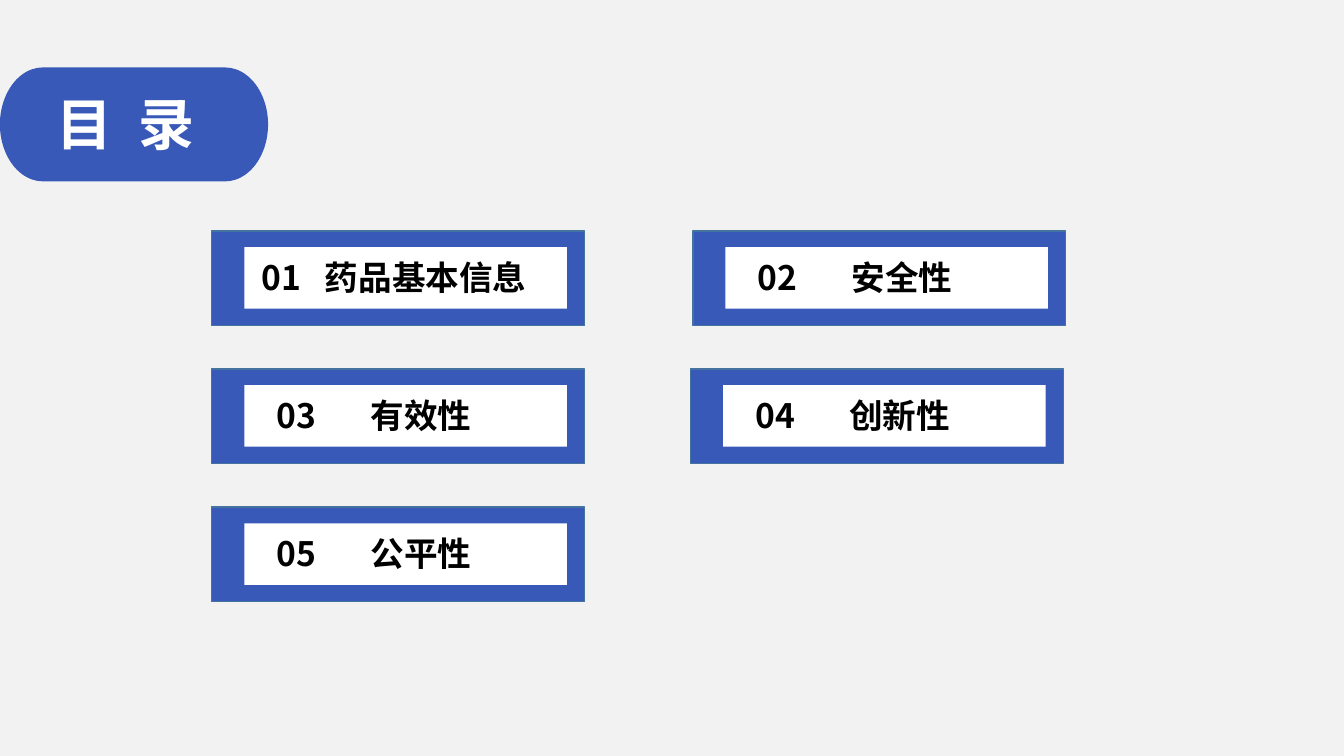
from pptx import Presentation
from pptx.dml.color import RGBColor
from pptx.enum.shapes import MSO_SHAPE as Geo
from pptx.enum.text import MSO_ANCHOR as Anchor
from pptx.oxml.ns import qn
from pptx.util import Pt

TITLE = "目\t录"
CARDS = [
    ("01\t药品基本信息", 151.2, 0, 5.4, 45),
    ("02\t安全性", 494.9, 0, 16, 67),
    ("03\t有效性", 151.2, 1, 16, 67),
    ("04\t创新性", 493.2, 1, 16, 67),
    ("05\t公平性", 151.2, 2, 16, 67),
]
FONT = "Noto Sans CJK SC"
BLUE = RGBColor(0x39, 0x59, 0xB9)
EDGE = RGBColor(0x43, 0x73, 0x9E)
WHITE = RGBColor(0xFF, 0xFF, 0xFF)
BLACK = RGBColor(0, 0, 0)
GREY = RGBColor(0xF2, 0xF2, 0xF2)
TOP, PITCH = 164.9, 98.65

deck = Presentation()
deck.slide_width, deck.slide_height = Pt(960), Pt(540)
slide = deck.slides.add_slide(deck.slide_layouts[6])
slide.background.fill.solid()
slide.background.fill.fore_color.rgb = GREY


def add_box(geo, spot, fill, edge=None):
    box = slide.shapes.add_shape(geo, *map(Pt, spot))
    box.shadow.inherit = False
    box.fill.solid()
    box.fill.fore_color.rgb = fill
    if edge is None:
        box.line.fill.background()
    else:
        box.line.color.rgb = edge
        box.line.width = Pt(1)


def add_text(text, spot, size, color, indent, tab):
    frame = slide.shapes.add_textbox(*map(Pt, spot)).text_frame
    frame.word_wrap = True
    frame.vertical_anchor = Anchor.MIDDLE
    frame.margin_left = Pt(7.2 + indent)
    para = frame.paragraphs[0]
    props = para._p.get_or_add_pPr()
    tabs = props.makeelement(qn("a:tabLst"), {})
    stop = tabs.makeelement(qn("a:tab"), {"pos": str(Pt(tab)), "algn": "l"})
    tabs.append(stop)
    props.append(tabs)
    run = para.add_run()
    run.text = text
    font = run.font
    font.name, font.size, font.bold = FONT, Pt(size), True
    font.color.rgb = color
    marks = run._r.get_or_add_rPr()
    marks.append(marks.makeelement(qn("a:ea"), {"typeface": FONT}))


add_box(Geo.FLOWCHART_TERMINATOR, (0, 48.2, 191.5, 81.4), BLUE)
add_text(TITLE, (24.5, 60.5, 139, 55.4), size=40, color=WHITE, indent=9, tab=58)

for text, left, row, indent, tab in CARDS:
    top = TOP + row * PITCH
    add_box(Geo.RECTANGLE, (left, top, 266.4, 67.7), BLUE, edge=EDGE)
    add_box(Geo.RECTANGLE, (left + 23.3, top + 11.6, 230.4, 43.9), WHITE)
    add_text(text, (left + 23.3, top + 15.1, 236.9, 36),
             size=24, color=BLACK, indent=indent, tab=tab)

deck.save("out.pptx")
